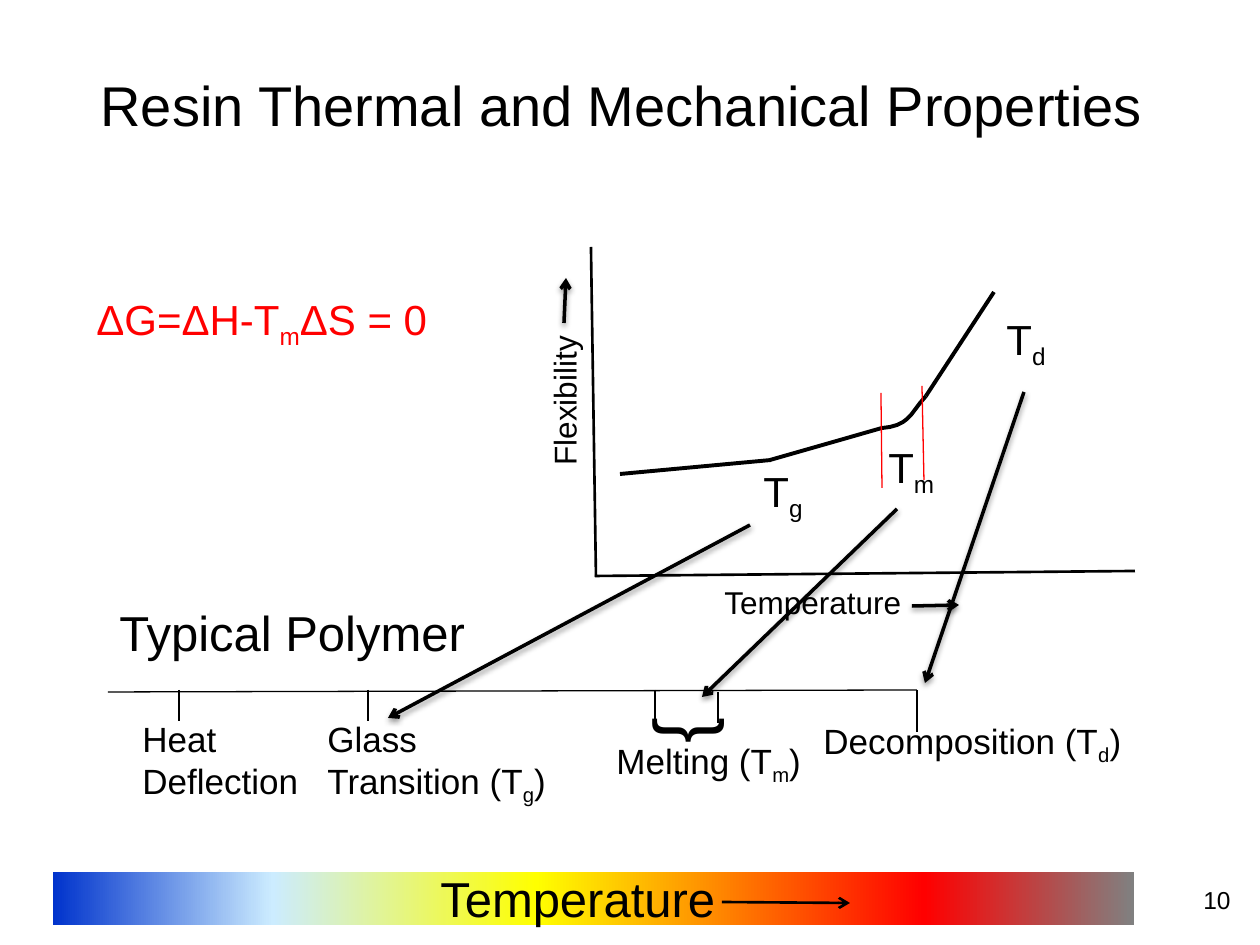
from lxml import etree
from pptx import Presentation
from pptx.dml.color import RGBColor
from pptx.enum.shapes import MSO_CONNECTOR, MSO_SHAPE
from pptx.enum.text import MSO_ANCHOR, PP_ALIGN
from pptx.oxml.ns import qn
from pptx.util import Pt

STRAIGHT = MSO_CONNECTOR.STRAIGHT
RECT = MSO_SHAPE.RECTANGLE
LEFT, MID, RIGHT = PP_ALIGN.LEFT, PP_ALIGN.CENTER, PP_ALIGN.RIGHT
TOP, MIDDLE = MSO_ANCHOR.TOP, MSO_ANCHOR.MIDDLE

SCALE = 914400 / 126
FONT = "Arial"
COLORS = {
    "black": "000000",
    "red": "FF0000",
    "blue": "0033CC",
    "ice": "CCECFF",
    "yellow": "FFFF00",
    "gray": "808080",
}


def px(n):
    return round(n * SCALE)


def rgb(name):
    return RGBColor.from_string(COLORS[name])


def add_text(slide, text, box, size, color="black", align=LEFT,
             anchor=TOP, wrap=False, turn=0):
    shape = slide.shapes.add_textbox(*map(px, box))
    shape.rotation = turn
    frame = shape.text_frame
    frame.word_wrap = wrap
    frame.vertical_anchor = anchor
    para = frame.paragraphs[0]
    para.alignment = align
    for i, part in enumerate(text.split("_")):
        run = para.add_run()
        run.text = part
        run.font.name = FONT
        run.font.size = Pt(size)
        run.font.color.rgb = rgb(color)
        if i % 2:
            run._r.get_or_add_rPr().set("baseline", "-25000")


def add_shade(effects):
    shade = etree.SubElement(effects, qn("a:outerShdw"), blurRad="40000",
                             dist="20000", dir="5400000", rotWithShape="0")
    tint = etree.SubElement(shade, qn("a:srgbClr"), val=COLORS["black"])
    etree.SubElement(tint, qn("a:alpha"), val="38000")


def add_line(slide, ends, width, color="black", arrow=False, shade=False):
    line = slide.shapes.add_connector(STRAIGHT, *map(px, ends))
    line.line.width = Pt(width)
    line.line.color.rgb = rgb(color)
    if arrow:
        etree.SubElement(line.line._get_or_add_ln(), qn("a:tailEnd"),
                         type="arrow")
    effects = etree.SubElement(line._element.spPr, qn("a:effectLst"))
    if shade:
        add_shade(effects)


def add_bar(slide, box, start, end):
    bar = slide.shapes.add_shape(RECT, *map(px, box))
    bar.shadow.inherit = False
    bar.line.fill.background()
    bar.fill.gradient()
    bar.fill.gradient_angle = 0
    for stop, name in zip(bar.fill.gradient_stops, (start, end)):
        stop.color.rgb = rgb(name)


def add_bend(slide, points, width):
    pen = slide.shapes.build_freeform(*points[0], scale=SCALE)
    pen.add_line_segments(points[1:], close=False)
    bend = pen.convert_to_shape()
    bend.shadow.inherit = False
    bend.fill.background()
    bend.line.width = Pt(width)
    bend.line.color.rgb = rgb("black")


def draw_scale(slide):
    add_text(slide, "Typical Polymer", (107, 596, 664, 72), 28, wrap=True)
    add_line(slide, (108, 692, 917, 690), 0.75)
    for x, y, end in ((179, 690, 721), (368, 690, 721), (655, 690, 721),
                      (718, 692, 723), (917, 690, 732)):
        add_line(slide, (x, y, x, end), 0.75)
    for text, box in (
        ("Heat Deflection", (130, 711, 232, 97)),
        ("Glass Transition (T_g_)", (315, 711, 257, 161)),
        ("Decomposition (T_d_)", (811, 713, 349, 55)),
        ("Melting (T_m_)", (604, 733, 237, 55)),
    ):
        add_text(slide, text, box, 20, wrap=True)
    add_text(slide, "{", (653, 678, 50, 106), 44, turn=270)


def draw_band(slide):
    edges = (53, 273, 536, 924, 1134)
    names = ("blue", "ice", "yellow", "red", "gray")
    for i in range(len(edges) - 1):
        box = (edges[i], 872, edges[i + 1] - edges[i], 53)
        add_bar(slide, box, names[i], names[i + 1])
    add_text(slide, "Temperature", (428, 862, 304, 72), 28)
    add_line(slide, (722, 902, 850, 903), 1.5, arrow=True)


def draw_graph(slide):
    for ends in ((591, 247, 596, 577), (1135, 571, 595, 576)):
        add_line(slide, ends, 1.5)
    for ends in ((620, 474, 771, 460), (770, 460, 882, 428),
                 (926, 396, 994, 292)):
        add_line(slide, ends, 2.25)
    add_bend(slide, ((882, 428), (890, 427), (897, 425), (903, 422),
                     (907, 419), (911, 415), (914, 411), (920, 403),
                     (926, 396)), 2.25)
    for ends in ((881, 393, 882, 488), (922, 386, 924, 480)):
        add_line(slide, ends, 0.75, "red")
    for text, box in (("T_g", (751, 459, 67, 63)),
                      ("T_m", (876, 435, 74, 63)),
                      ("T_d", (994, 307, 67, 63))):
        add_text(slide, text, box, 24)
    add_text(slide, "Temperature", (712, 577, 204, 50), 18)
    add_text(slide, "Flexibility", (486, 375, 156, 50), 18, turn=270)
    for ends in ((564, 323, 566, 278), (912, 606, 959, 605),
                 (750, 525, 388, 718), (897, 509, 702, 697),
                 (1024, 392, 925, 683)):
        add_line(slide, ends, 2, arrow=True, shade=True)


def main():
    deck = Presentation()
    deck.slide_width, deck.slide_height = px(1260), px(945)
    slide = deck.slides.add_slide(deck.slide_layouts[6])
    add_text(slide, "Resin Thermal and Mechanical Properties",
             (55, 25, 1134, 158), 32, align=MID, anchor=MIDDLE, wrap=True)
    draw_scale(slide)
    draw_band(slide)
    draw_graph(slide)
    add_text(slide, "10", (1166, 879, 77, 45), 14, align=RIGHT, wrap=True)
    add_text(slide, "ΔG=ΔH-T_m_ΔS = 0", (84, 287, 364, 63), 24, "red")
    deck.save("out.pptx")


if __name__ == "__main__":
    main()
